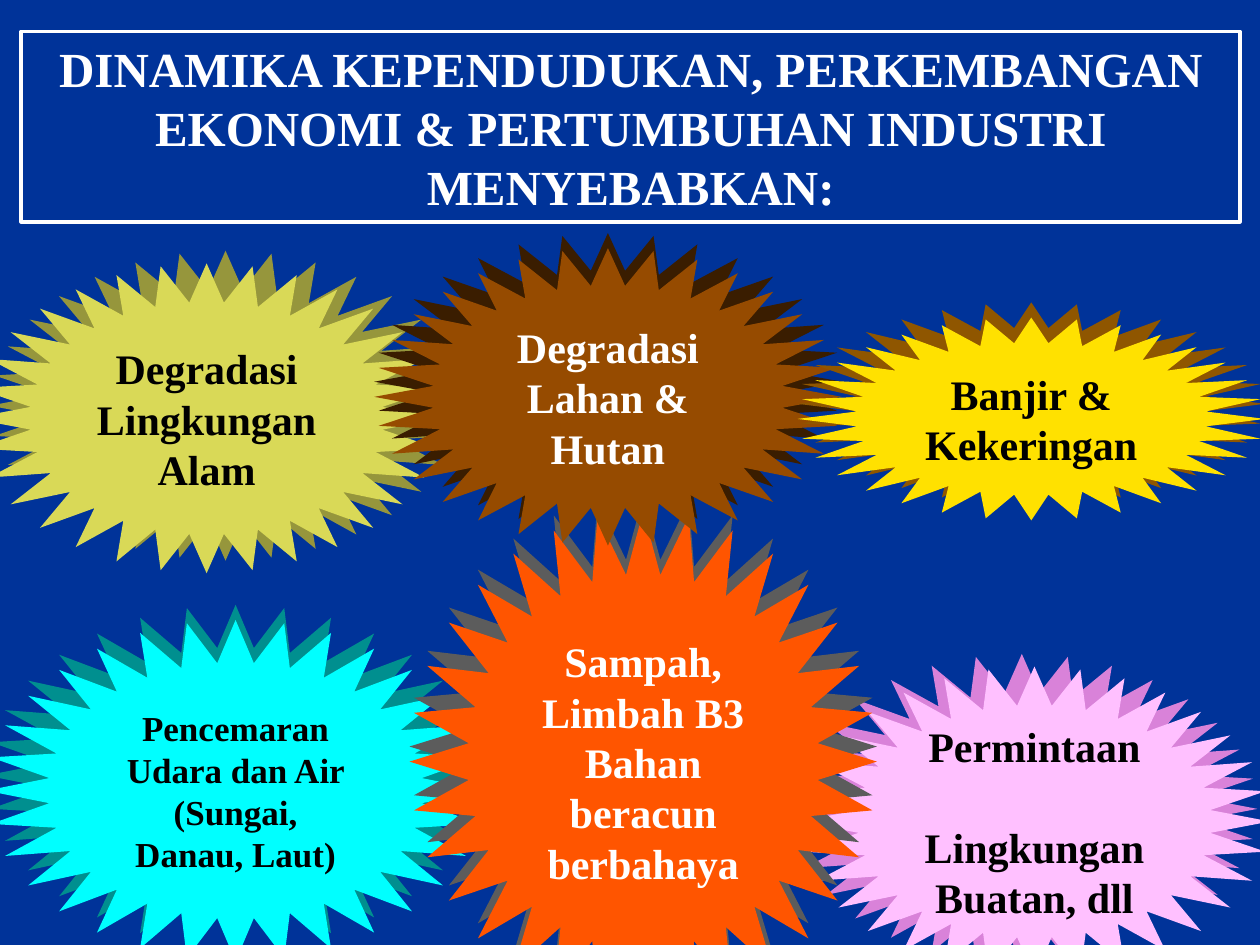
from dataclasses import dataclass

from pptx import Presentation
from pptx.dml.color import RGBColor
from pptx.enum.shapes import MSO_SHAPE as Shape
from pptx.enum.text import MSO_ANCHOR as Anchor, MSO_AUTO_SIZE as AutoSize, PP_ALIGN as Align
from pptx.util import Inches, Pt


@dataclass(frozen=True)
class Theme:
    font: str = "Times New Roman"
    background: str = "003399"
    light: str = "FFFFFF"
    dark: str = "000000"
    title_size: int = 28
    body_size: int = 24
    small_size: int = 20
    lime: tuple = ("D9D957", "96963C")
    pink: tuple = ("FFC0FF", "D982D9")
    cyan: tuple = ("00FFFF", "008F8F")
    orange: tuple = ("FF5500", "5C5C5C")
    brown: tuple = ("964B00", "3A1D00")
    yellow: tuple = ("FFE100", "8F5600")


theme = Theme()


def write(shape, text, size, color):
    """Put centred bold text in the middle of a shape."""
    frame = shape.text_frame
    frame.word_wrap = True
    frame.auto_size = AutoSize.NONE
    frame.vertical_anchor = Anchor.MIDDLE
    frame.text = text
    paragraph = frame.paragraphs[0]
    paragraph.alignment = Align.CENTER
    for name, value in {"name": theme.font, "size": Pt(size), "bold": True}.items():
        setattr(paragraph.font, name, value)
    paragraph.font.color.rgb = RGBColor.from_string(color)


def add_star(box, color):
    star = slide.shapes.add_shape(Shape.STAR_32_POINT, *map(Inches, box))
    star.adjustments[0] = 0.375
    star.shadow.inherit = False
    star.fill.solid()
    star.fill.fore_color.rgb = RGBColor.from_string(color)
    star.line.fill.background()
    return star


presentation = Presentation()
presentation.slide_width, presentation.slide_height = Inches(10), Inches(7.5)
slide = presentation.slides.add_slide(presentation.slide_layouts[5])
slide.background.fill.solid()
slide.background.fill.fore_color.rgb = RGBColor.from_string(theme.background)

title = slide.shapes.title
title.left, title.top, title.width, title.height = map(Inches, (0.17, 0.25, 9.67, 1.51))
title.line.color.rgb = RGBColor.from_string(theme.light)
title.line.width = Pt(2.25)
write(title, "DINAMIKA KEPENDUDUKAN, PERKEMBANGAN EKONOMI & PERTUMBUHAN INDUSTRI MENYEBABKAN:",
      theme.title_size, theme.light)

# Box, (front, side) colours, offset of the side, text, size, text colour
impacts = [
    ((-0.23, 2.09, 3.74, 2.46), theme.lime, (0.15, -0.1),
     "Degradasi Lingkungan Alam", theme.body_size, theme.dark),
    ((6.34, 5.29, 3.74, 2.46), theme.pink, (-0.1, -0.1),
     "Permintaan\v\vLingkungan Buatan, dll", theme.body_size, theme.dark),
    ((-0.11, 4.92, 3.96, 2.71), theme.cyan, (0, -0.12),
     "Pencemaran Udara dan Air (Sungai, Danau, Laut)", theme.small_size, theme.dark),
    ((3.25, 4.06, 3.71, 3.97), theme.orange, (0, -0.12),
     "Sampah, Limbah B3 Bahan beracun berbahaya", theme.body_size, theme.light),
    ((2.97, 1.97, 3.71, 2.36), theme.brown, (0, -0.12),
     "Degradasi Lahan & Hutan", theme.body_size, theme.light),
    ((6.33, 2.52, 3.71, 1.61), theme.yellow, (0, -0.12),
     "Banjir & Kekeringan", theme.body_size, theme.dark),
]
for box, (front, side), (dx, dy), text, size, color in impacts:
    left, top, width, height = box
    add_star((left + dx, top + dy, width, height), side)
    write(add_star(box, front), text, size, color)

presentation.save("out.pptx")
